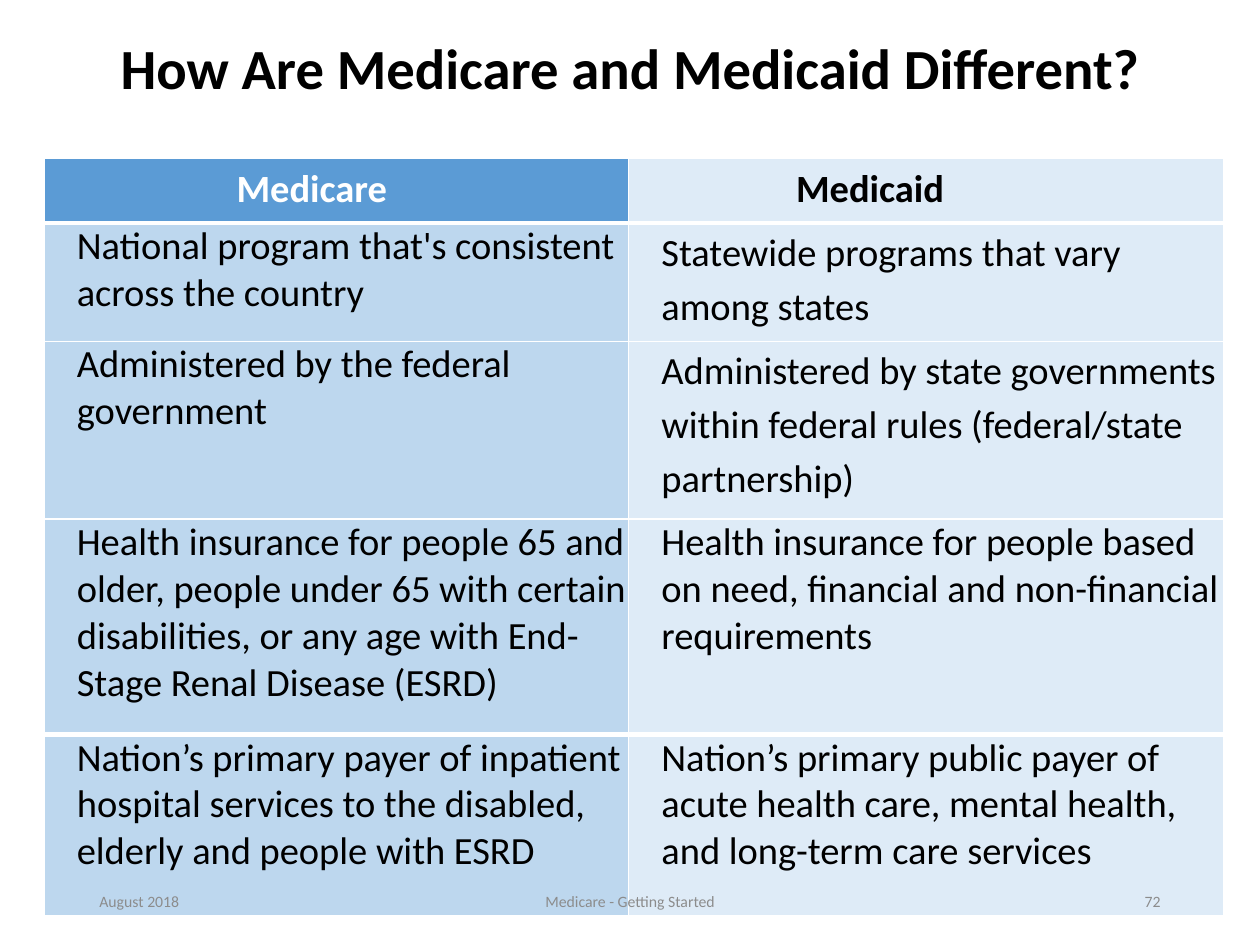
from lxml import etree
from pptx import Presentation
from pptx import util as u
from pptx.dml.color import RGBColor
from pptx.enum import text
from pptx.oxml.ns import qn

WIDTH, HEIGHT = u.Inches(10), u.Inches(7.5)
COLORS = {"ink": "000000", "white": "FFFFFF", "muted": "8C8C8C",
          "header": "5B9BD5", "medicare": "BDD7EE", "medicaid": "DEEBF7"}
ALIGN = text.PP_ALIGN

COLUMNS = [4.64, 4.72]
ROWS = [0.51, 0.94, 1.41, 1.71, 1.44]
HEADINGS = ["Medicare", "Medicaid"]
HEADING_RIGHT_INSETS = [0.39, 0.89]
COMPARISONS = [
    ("National program that's consistent across the country",
     "Statewide programs that vary among states"),
    ("Administered by the federal government",
     "Administered by state governments within federal rules "
     "(federal/state partnership)"),
    ("Health insurance for people 65 and older, people under 65 with certain "
     "disabilities, or any age with End-Stage Renal Disease (ESRD)",
     "Health insurance for people based on need, financial and "
     "non-financial requirements"),
    ("Nation’s primary payer of inpatient hospital services to the disabled, "
     "elderly and people with ESRD",
     "Nation’s primary public payer of acute health care, mental health, "
     "and long-term care services"),
]
LOOSE_ROWS = (1, 2)  # Medicaid cells with wider line spacing


def color(name):
    return RGBColor.from_string(COLORS[name])


def share(left, top, width, height):
    """Turn shares of the page into a box."""
    return (int(left * WIDTH), int(top * HEIGHT),
            int(width * WIDTH), int(height * HEIGHT))


def write(para, words, ink, size, bold=False, **layout):
    for name, value in layout.items():
        setattr(para, name, value)
    span = para.add_run()
    span.text = words
    span.font.color.rgb = color(ink)
    for name, value in {"name": "Calibri", "size": u.Pt(size), "bold": bold}.items():
        setattr(span.font, name, value)


def add_label(page, box, words, ink, size, bold=False, **layout):
    frame = page.shapes.add_textbox(*box).text_frame
    frame.word_wrap = True
    frame.vertical_anchor = text.MSO_ANCHOR.MIDDLE
    write(frame.paragraphs[0], words, ink, size, bold, **layout)


def add_borders(cell, top, bottom):
    """White rules; the line elements must precede the cell's fill."""
    properties = cell._tc.get_or_add_tcPr()
    sides = {"lnL": 1, "lnR": 1, "lnT": top, "lnB": bottom}
    for index, (side, points) in enumerate(sides.items()):
        line = etree.Element(qn("a:" + side), w=str(u.Pt(points)))
        fill = etree.SubElement(line, qn("a:solidFill"))
        etree.SubElement(fill, qn("a:srgbClr"), val=COLORS["white"])
        properties.insert(index, line)


def format_cell(cell, fill, top, bottom):
    for side in ("left", "top", "right", "bottom"):
        setattr(cell, "margin_" + side, 0)
    cell.fill.solid()
    cell.fill.fore_color.rgb = color(fill)
    add_borders(cell, top, bottom)


def add_comparison(page, box):
    left, top, width, height = box
    table = page.shapes.add_table(len(ROWS), len(COLUMNS), *box).table
    for flag in ("first_row", "horz_banding"):
        setattr(table, flag, False)
    for column, part in zip(table.columns, COLUMNS):
        column.width = int(width * part / sum(COLUMNS))
    for row, part in zip(table.rows, ROWS):
        row.height = int(height * part / sum(ROWS))

    # Thick rules below the headings and above the last row
    last = len(ROWS) - 1
    rules = [3 if edge in (1, last) else 1 for edge in range(len(ROWS) + 1)]

    # Headings
    for col, heading in enumerate(HEADINGS):
        cell = table.cell(0, col)
        format_cell(cell, ("header", "medicaid")[col], rules[0], rules[1])
        cell.margin_right = u.Inches(HEADING_RIGHT_INSETS[col])
        write(cell.text_frame.paragraphs[0], heading, ("white", "ink")[col], 22, True,
              alignment=ALIGN.CENTER, line_spacing=1.15, space_before=u.Pt(1.1))

    # Statements
    for row, statements in enumerate(COMPARISONS, start=1):
        for col, statement in enumerate(statements):
            cell = table.cell(row, col)
            format_cell(cell, ("medicare", "medicaid")[col], rules[row], rules[row + 1])
            para = cell.text_frame.paragraphs[0]
            para._p.get_or_add_pPr().set("marL", str(u.Inches(0.26)))
            loose = col == 1 and row in LOOSE_ROWS
            layout = {"line_spacing": 1.15, "space_before": u.Pt(2.1)} if loose else {}
            write(para, statement, "ink", 22, **layout)


def add_footer(page, box):
    left, top, width, height = box
    parts = [("August 2018", 0, 2.25, ALIGN.LEFT),
             ("Medicare - Getting Started", 2.62, 3.38, ALIGN.CENTER),
             ("72", 6.37, 2.25, ALIGN.RIGHT)]
    for words, start, span, alignment in parts:
        place = (left + int(width * start / 8.62), top, int(width * span / 8.62), height)
        add_label(page, place, words, "muted", 9, alignment=alignment)


def main():
    deck = Presentation()
    deck.slide_width, deck.slide_height = WIDTH, HEIGHT
    page = deck.slides.add_slide(deck.slide_layouts[6])
    # Title
    add_label(page, share(0.069, 0, 0.862, 0.15),
              "How Are Medicare and Medicaid Different?", "ink", 32.4, True,
              alignment=ALIGN.CENTER, line_spacing=0.9)
    add_comparison(page, share(0.035, 1.26 / 7.5, 0.936, 6.01 / 7.5))
    add_footer(page, share(0.069, 6.95 / 7.5, 0.862, 0.4 / 7.5))
    deck.save("out.pptx")


if __name__ == "__main__":
    main()
